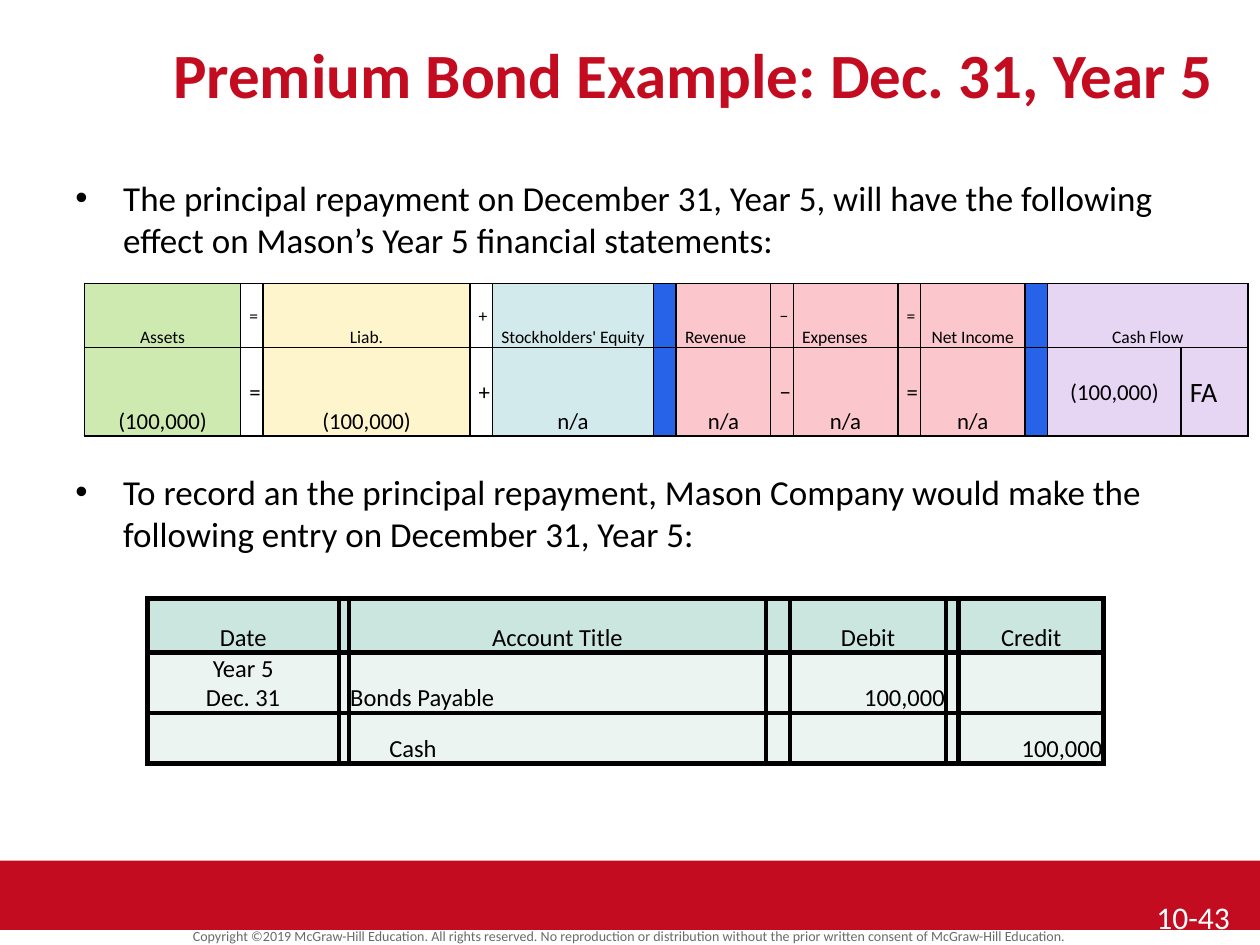
from lxml import etree
from pptx import Presentation
from pptx.dml.color import RGBColor
from pptx.enum.shapes import MSO_SHAPE
from pptx.enum.text import MSO_ANCHOR as ANCHOR, PP_ALIGN as ALIGN
from pptx.oxml.ns import qn
from pptx.util import Inches, Pt

C = {
    "red": "C30C20", "black": "000000", "white": "FFFFFF", "gray": "6A6A6A",
    "assets": "CEEAB0", "liab": "FFF5CC", "equity": "D3EAED", "divider": "2763E9",
    "income": "FBC6CC", "cash": "E6D5F3", "head": "CAE6DE", "body": "ECF4F1",
}


def rgb(name):
    return RGBColor.from_string(C[name])


def set_text(tf, text, size, color="black", bold=False, **para):
    """Fill a text frame, one paragraph per line of text."""
    for i, line in enumerate(text.split("\n")):
        p = tf.paragraphs[0] if i == 0 else tf.add_paragraph()
        for key, value in para.items():
            setattr(p, key, value)
        r = p.add_run()
        r.text = line
        for key, value in {"name": "Calibri", "size": Pt(size), "bold": bold}.items():
            setattr(r.font, key, value)
        r.font.color.rgb = rgb(color)


def add_text(s, box, *args, **para):
    tf = s.shapes.add_textbox(*map(Inches, box)).text_frame
    tf.word_wrap = True
    set_text(tf, *args, **para)
    return tf


def add_borders(cell, width):
    tc_pr = cell._tc.get_or_add_tcPr()
    for side in ("lnL", "lnR", "lnT", "lnB"):
        ln = etree.SubElement(tc_pr, qn(f"a:{side}"), w=str(Pt(width)))
        fill = etree.SubElement(ln, qn("a:solidFill"))
        etree.SubElement(fill, qn("a:srgbClr"), val=C["black"])


def add_grid(s, left, top, cols, rows, border, insets):
    """Add an unstyled table with borders on every cell."""
    box = (left, top, sum(cols), sum(rows))
    table = s.shapes.add_table(len(rows), len(cols), *map(Inches, box)).table
    table.first_row = table.horz_banding = False
    for col, width in zip(table.columns, cols):
        col.width = Inches(width)
    for row, height in zip(table.rows, rows):
        row.height = Inches(height)
    for cell in table.iter_cells():
        add_borders(cell, border)
        for side, inset in zip(("left", "top", "right", "bottom"), insets):
            setattr(cell, f"margin_{side}", Inches(inset))
        cell.vertical_anchor = ANCHOR.BOTTOM
    return table


def fill_cell(cell, color):
    if color:
        cell.fill.solid()
        cell.fill.fore_color.rgb = rgb(color)
    else:
        cell.fill.background()


def add_title(s, box):
    title = s.shapes.title
    title.left, title.top, title.width, title.height = map(Inches, box)
    title.text_frame.vertical_anchor = ANCHOR.MIDDLE
    set_text(title.text_frame, "Premium Bond Example: Dec. 31, Year 5", 36, "red", True,
             alignment=ALIGN.CENTER)


def add_bullets(s, box):
    text = ("The principal repayment on December 31, Year 5, will have the following "
            "effect on Mason’s Year 5 financial statements:\n"
            "To record an the principal repayment, Mason Company would make the "
            "following entry on December 31, Year 5:")
    tf = add_text(s, box, text, 20)
    for p in tf.paragraphs:
        p_pr = p._p.get_or_add_pPr()
        p_pr.set("marL", str(Inches(0.38)))
        p_pr.set("indent", str(-Inches(0.38)))
        etree.SubElement(p_pr, qn("a:buFont"), typeface="Arial")
        etree.SubElement(p_pr, qn("a:buChar"), char="•")
    # Room for the statements table between the two bullets
    tf.paragraphs[1].space_before = Pt(120)


def add_statements(s, left, top):
    cols = [1.24, 0.17, 1.64, 0.17, 1.28, 0.18, 0.75, 0.17, 0.83, 0.17, 0.83, 0.18, 1.06, 0.53]
    fills = ["assets", None, "liab", None, "equity", "divider"] + ["income"] * 5
    fills += ["divider", "cash", "cash"]
    content = [
        ["Assets", "=", "Liab.", "+", "Stockholders' Equity", "", "Revenue", "−",
         "Expenses", "=", "Net Income", "", "Cash Flow", ""],
        ["(100,000)", "=", "(100,000)", "+", "n/a", "", "n/a", "−",
         "n/a", "=", "n/a", "", "(100,000)", "FA"],
    ]
    table = add_grid(s, left, top, cols, [0.51, 0.7], 1, (0.07, 0, 0.07, 0))
    table.cell(0, 12).merge(table.cell(0, 13))
    for r, (line, size) in enumerate(zip(content, (10, 13))):
        for c, (text, color) in enumerate(zip(line, fills)):
            cell = table.cell(r, c)
            fill_cell(cell, color)
            if not text:
                continue
            if text in "=+−" or (r == 1 and c >= 12):
                cell.vertical_anchor = ANCHOR.MIDDLE
            is_left = text in ("Revenue", "Expenses", "FA")
            set_text(cell.text_frame, text, 16 if text == "FA" else size, line_spacing=1.07,
                     alignment=ALIGN.LEFT if is_left else ALIGN.CENTER)


def add_journal(s, left, top):
    cols = [1.52, 0.08, 3.31, 0.19, 1.24, 0.1, 1.15]
    content = [
        ["Date", "Account Title", "Debit", "Credit"],
        ["Year 5\nDec. 31", "Bonds Payable", "100,000", ""],
        ["", "Cash", "", "100,000"],
    ]
    aligns = [ALIGN.CENTER, ALIGN.LEFT, ALIGN.RIGHT, ALIGN.RIGHT]
    table = add_grid(s, left, top, cols, [0.43, 0.48, 0.4], 3, (0.01, 0.01, 0.01, 0))
    for cell in table.iter_cells():
        fill_cell(cell, "body")
    for cell in table.rows[0].cells:
        fill_cell(cell, "head")
    # Text goes in every second column; the others are separators
    for r, line in enumerate(content):
        for c, (text, align) in enumerate(zip(line, aligns)):
            if text:
                set_text(table.cell(r, 2 * c).text_frame, text, 14,
                         alignment=align if r else ALIGN.CENTER)
    table.cell(2, 2).margin_left = Inches(0.32)


def add_footer(s, box):
    left, top, width, height = box
    bar = s.shapes.add_shape(MSO_SHAPE.RECTANGLE, *map(Inches, box))
    bar.shadow.inherit = False
    bar.fill.solid()
    bar.fill.fore_color.rgb = rgb("red")
    bar.line.fill.background()
    add_text(s, (left, top + 0.51, width, 0.19),
             "Copyright ©2019 McGraw-Hill Education. All rights reserved. No reproduction or "
             "distribution without the prior written consent of McGraw-Hill Education.",
             8, "gray", alignment=ALIGN.CENTER, line_spacing=0.8)
    add_text(s, (left + width - 0.92, top + 0.25, 0.92, 0.42), "10-43", 18, "white")


def main():
    prs = Presentation()
    prs.slide_width, prs.slide_height = Inches(10), Inches(7.5)
    s = prs.slides.add_slide(prs.slide_layouts[5])
    add_footer(s, (0, 6.83, 10, 0.55))
    add_title(s, (1, 0.25, 9, 0.67))
    add_bullets(s, (0.5, 1.35, 9, 3.2))
    add_statements(s, 0.67, 2.25)
    add_journal(s, 1.17, 4.75)
    prs.save("out.pptx")


if __name__ == "__main__":
    main()
